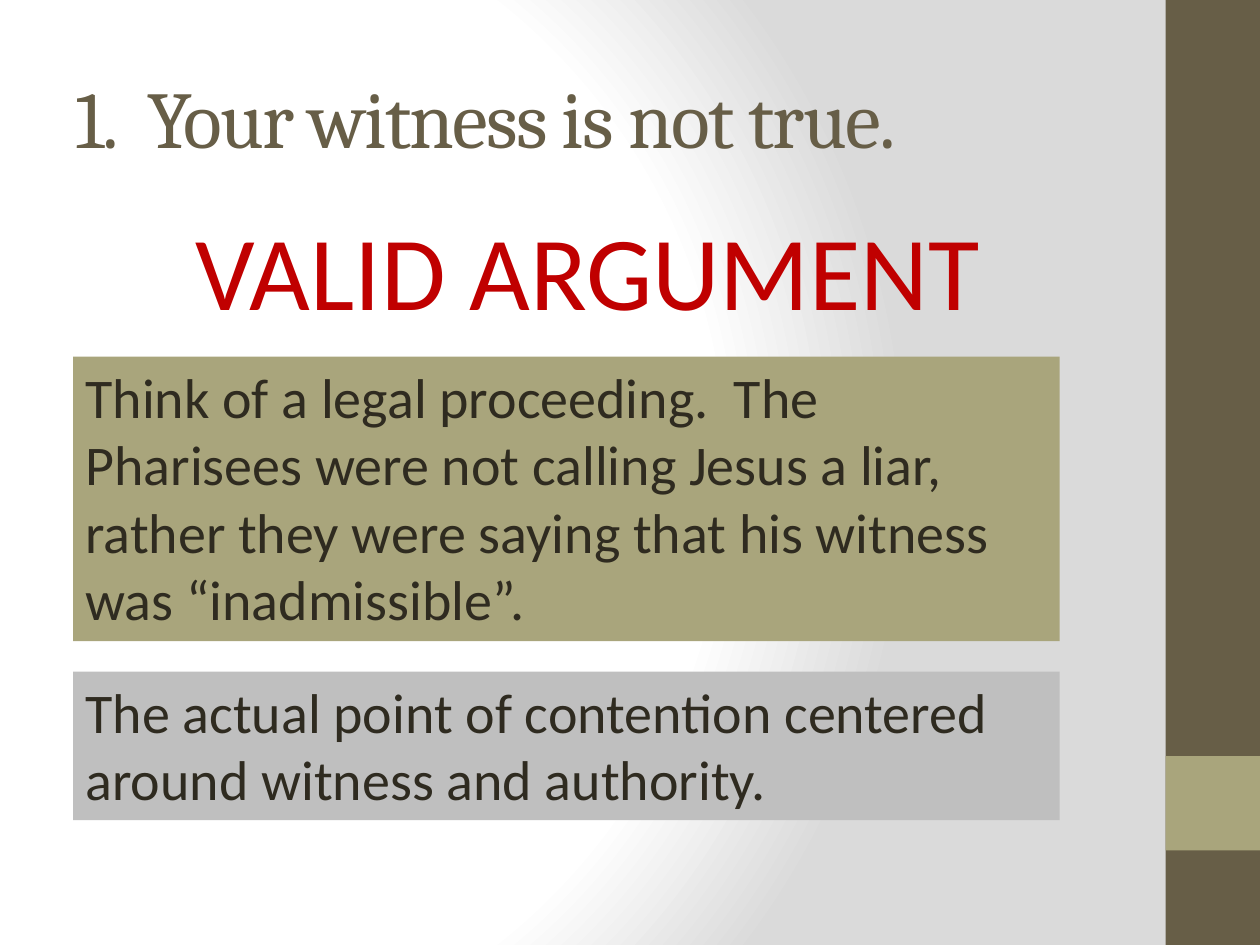
import pptx
import pptx.dml.color
import pptx.enum.shapes
import pptx.enum.text
import pptx.oxml
import pptx.oxml.ns
import pptx.util
from pptx.util import Inches

OLIVE, KHAKI, GREY, RED, INK = "675E47", "A9A57C", "BFBFBF", "C00000", "2F2B20"
TITLE = "1.  Your witness is not true."
VERDICT = "VALID ARGUMENT"
SIDEBAR = [  # left, top, width, height, fill
    (9.25, 0, 0.75, 7.5, OLIVE),
    (9.25, 6, 0.75, 0.75, KHAKI),
]
NOTES = [  # top, height, fill, text
    (2.83, 2.26, KHAKI, "Think of a legal proceeding.  The Pharisees were not calling Jesus "
     "a liar, rather they were saying that his witness was “inadmissible”."),
    (5.33, 1.18, GREY, "The actual point of contention centered around witness and authority."),
]
NOTE_LEFT, NOTE_WIDTH = 0.58, 7.83
BACKDROP_STOPS = [(0, "FFFFFF"), (75, "FFFFFF"), (100, "DADADA")]


def color(value):
    return pptx.dml.color.RGBColor.from_string(value)


def paint_backdrop(page):
    stops = "".join(f'<a:gs pos="{position * 1000}"><a:srgbClr val="{value}"/></a:gs>'
                    for position, value in BACKDROP_STOPS)
    page.element.cSld.insert(0, pptx.oxml.parse_xml(
        f'<p:bg {pptx.oxml.ns.nsdecls("p", "a")}><p:bgPr><a:gradFill rotWithShape="1">'
        f'<a:gsLst>{stops}</a:gsLst><a:path path="circle">'
        '<a:fillToRect l="20000" t="50000" r="100000" b="50000"/></a:path>'
        '</a:gradFill><a:effectLst/></p:bgPr></p:bg>'))


def place(shape, left, top, width, height):
    shape.left, shape.top = Inches(left), Inches(top)
    shape.width, shape.height = Inches(width), Inches(height)


def add_block(page, left, top, width, height, fill):
    block = page.shapes.add_shape(pptx.enum.shapes.MSO_SHAPE.RECTANGLE, Inches(left),
                                  Inches(top), Inches(width), Inches(height))
    block.shadow.inherit = False
    block.fill.solid()
    block.fill.fore_color.rgb = color(fill)
    block.line.fill.background()
    return block


def write(shape, text, size, font, value, anchor):
    """Fill a shape with one left-aligned paragraph; return paragraph and run."""
    frame = shape.text_frame
    frame.word_wrap = True
    frame.auto_size = pptx.enum.text.MSO_AUTO_SIZE.NONE
    frame.vertical_anchor = anchor
    para = frame.paragraphs[0]
    para.alignment = pptx.enum.text.PP_ALIGN.LEFT
    span = para.add_run()
    span.text = text
    span.font.size = pptx.util.Pt(size)
    span.font.name = font
    span.font.color.rgb = color(value)
    return para, span


def main():
    deck = pptx.Presentation()
    deck.slide_width, deck.slide_height = Inches(10), Inches(7.5)
    page = deck.slides.add_slide(deck.slide_layouts[1])
    paint_backdrop(page)
    top = pptx.enum.text.MSO_ANCHOR.TOP
    middle = pptx.enum.text.MSO_ANCHOR.MIDDLE

    for bar in SIDEBAR:
        add_block(page, *bar)

    title, body = page.placeholders
    place(title, 0.5, 0.3, 8.33, 1.25)
    para, span = write(title, TITLE, 46, "Cambria", OLIVE, middle)
    span.font._element.set("spc", "-100")

    place(body, 1.33, 1.58, 6.75, 1.08)
    para, span = write(body, VERDICT, 60, "Calibri", RED, top)
    para.space_before = pptx.util.Pt(12)
    properties = para._p.get_or_add_pPr()
    properties.set("marL", str(Inches(0.12)))
    properties.set("indent", "0")
    properties.append(pptx.oxml.parse_xml(f'<a:buNone {pptx.oxml.ns.nsdecls("a")}/>'))

    for note_top, height, fill, text in NOTES:
        note = add_block(page, NOTE_LEFT, note_top, NOTE_WIDTH, height, fill)
        write(note, text, 32, "Calibri", INK, top)

    deck.save("out.pptx")


if __name__ == "__main__":
    main()
